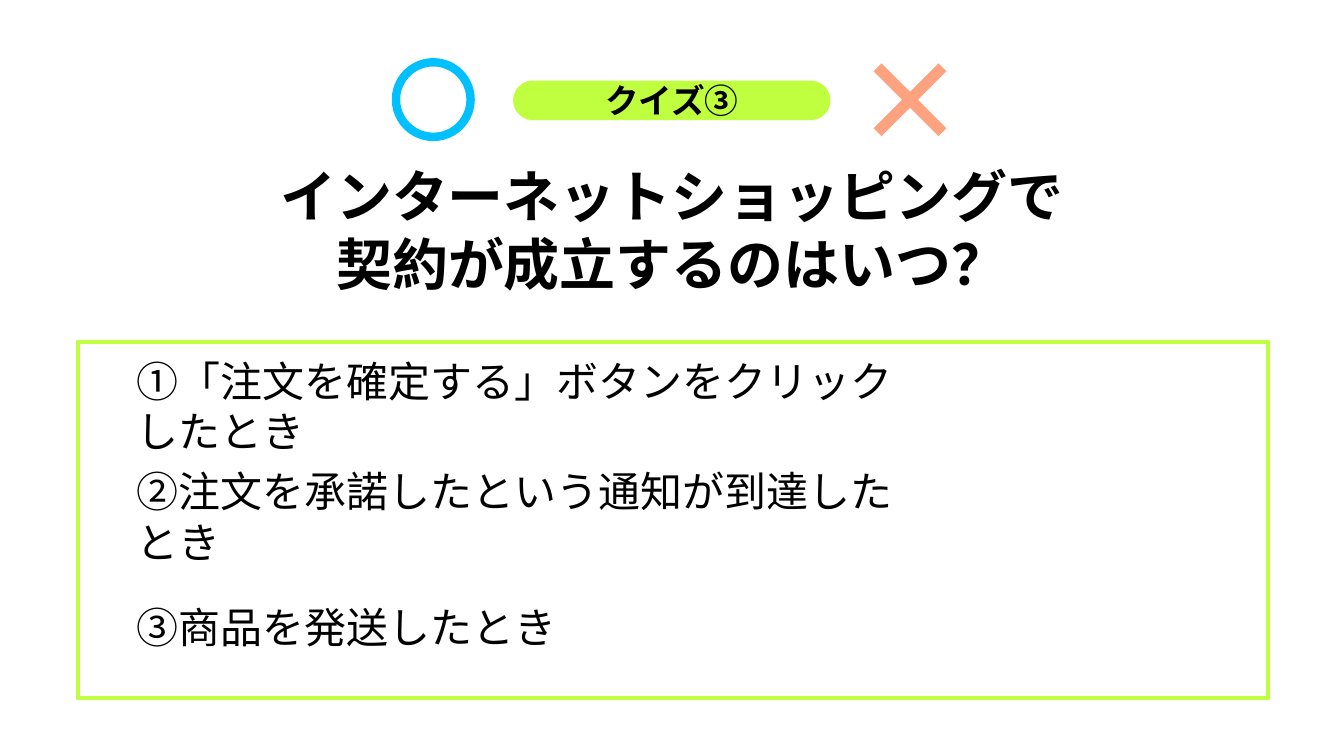
from dataclasses import dataclass

from lxml.etree import SubElement
from pptx import Presentation
from pptx.dml.color import RGBColor
from pptx.enum.shapes import MSO_SHAPE
from pptx.enum.text import MSO_ANCHOR, PP_ALIGN
from pptx.oxml.ns import qn
from pptx.shapes.autoshape import Shape
from pptx.slide import Slide
from pptx.util import Cm, Pt

FONT = "Noto Sans CJK JP"
COLORS = {"lime": "C0FF40", "blue": "00C0FF", "coral": "FFA280", "text": "000000"}
TITLE = ["インターネットショッピングで", "契約が成立するのはいつ？"]
ANSWERS = [
    "①「注文を確定する」ボタンをクリックしたとき",
    "②注文を承諾したという通知が到達したとき",
    "③商品を発送したとき",
]
ANSWER_TOP, ANSWER_PITCH = 9.73, 2.78


@dataclass
class Box:
    """Position and size in centimetres."""
    x: float
    y: float
    w: float
    h: float

    def lengths(self) -> tuple[Cm, Cm, Cm, Cm]:
        return Cm(self.x), Cm(self.y), Cm(self.w), Cm(self.h)


@dataclass
class Figure:
    kind: MSO_SHAPE
    box: Box
    fill: str | None = None
    line: str | None = None
    line_width: float = 0
    adjustment: float | None = None


FRAME = Figure(MSO_SHAPE.RECTANGLE, Box(1.96, 8.61, 30, 8.99), line="lime", line_width=3)
PILL = Figure(MSO_SHAPE.ROUNDED_RECTANGLE, Box(12.93, 2.03, 8, 1), fill="lime", adjustment=0.5)
CIRCLE = Figure(MSO_SHAPE.OVAL, Box(9.98, 1.57, 1.88, 1.88), line="blue", line_width=6)
CROSS = Figure(MSO_SHAPE.MATH_MULTIPLY, Box(21.36, 0.94, 3.15, 3.15), fill="coral", adjustment=0.09)


def rgb(name: str) -> RGBColor:
    return RGBColor.from_string(COLORS[name])


def add_figure(s: Slide, figure: Figure) -> Shape:
    sp = s.shapes.add_shape(figure.kind, *figure.box.lengths())
    sp.shadow.inherit = False
    if figure.adjustment is not None:
        sp.adjustments[0] = figure.adjustment
    if figure.fill:
        sp.fill.solid()
        sp.fill.fore_color.rgb = rgb(figure.fill)
    else:
        sp.fill.background()
    if figure.line:
        sp.line.color.rgb = rgb(figure.line)
        sp.line.width = Pt(figure.line_width)
    else:
        sp.line.fill.background()
    return sp


def write(sp: Shape, lines: list[str], size: float, heading: bool = True) -> None:
    """Fill sp with one paragraph per line; headings are bold, centred and without insets."""
    tf = sp.text_frame
    tf.word_wrap = True
    tf.vertical_anchor = MSO_ANCHOR.MIDDLE
    if heading:
        tf.margin_left = tf.margin_right = tf.margin_top = tf.margin_bottom = 0
    tf.text = "\n".join(lines)
    for p in tf.paragraphs:
        p.alignment = PP_ALIGN.CENTER if heading else PP_ALIGN.LEFT
        if not heading:
            p.space_after = Pt(6)
        p.font.size = Pt(size)
        p.font.bold = heading
        p.font.color.rgb = rgb("text")
        p.font.name = FONT
        # Japanese glyphs take the East Asian typeface
        SubElement(p.font._element, qn("a:ea"), typeface=FONT)


def main() -> None:
    prs = Presentation()
    prs.slide_width, prs.slide_height = Cm(33.87), Cm(19.05)
    s = prs.slides.add_slide(prs.slide_layouts[6])

    title = s.shapes.add_textbox(*Box(1.93, 3.78, 30, 3.99).lengths())
    write(title, TITLE, 40)
    add_figure(s, FRAME)
    write(add_figure(s, PILL), ["クイズ③"], 24)
    add_figure(s, CIRCLE)
    add_figure(s, CROSS)

    for i, answer in enumerate(ANSWERS):
        box = Box(3.2, ANSWER_TOP + i * ANSWER_PITCH, 20, 1)
        write(s.shapes.add_textbox(*box.lengths()), [answer], 30, heading=False)

    prs.save("out.pptx")


if __name__ == "__main__":
    main()
